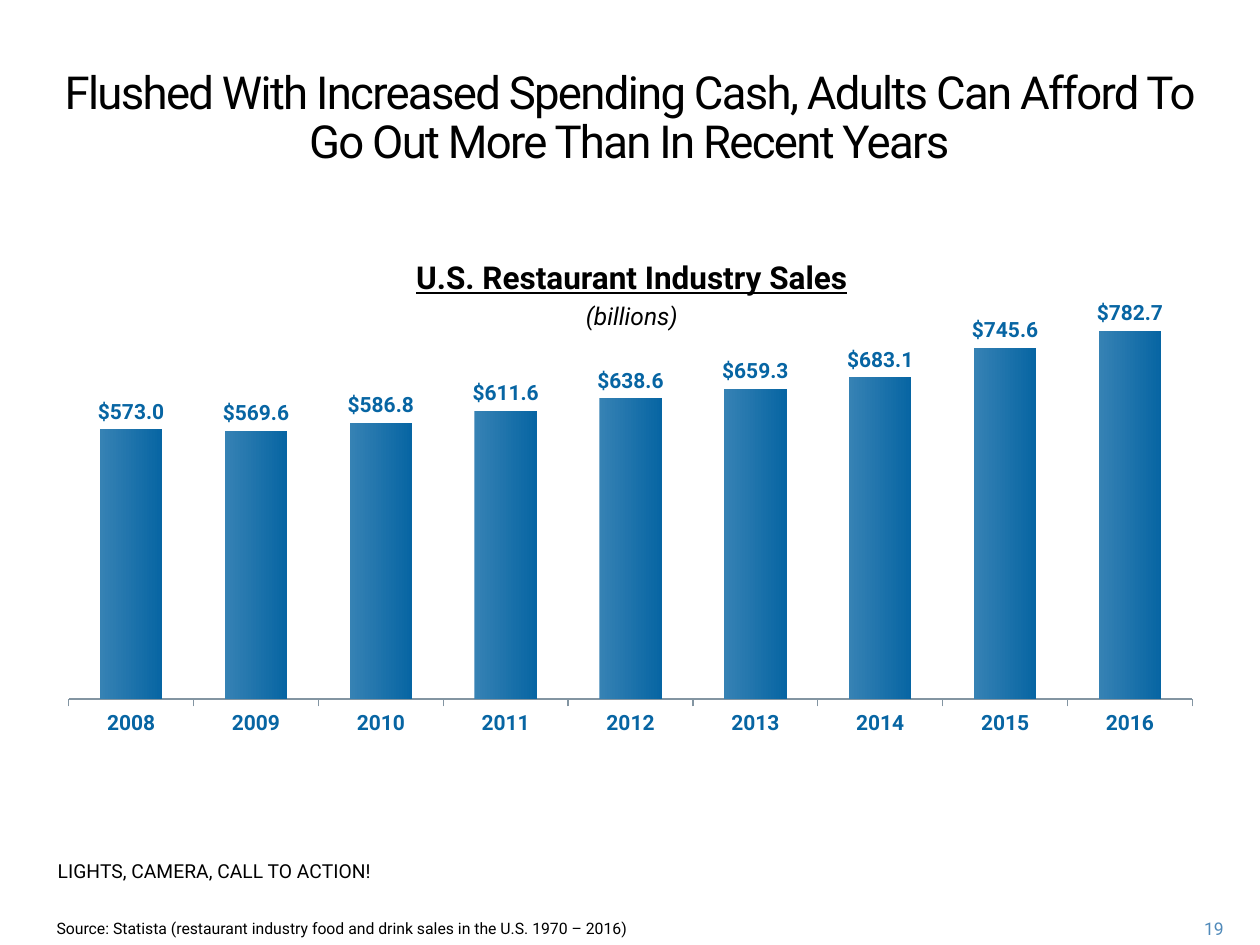
from lxml import etree
from pptx import Presentation
from pptx.chart.data import CategoryChartData
from pptx.dml.color import RGBColor
from pptx.enum.chart import XL_CHART_TYPE, XL_LABEL_POSITION, XL_TICK_MARK
from pptx.enum.text import MSO_ANCHOR, MSO_AUTO_SIZE, PP_ALIGN
from pptx.oxml import parse_xml
from pptx.oxml.ns import nsdecls
from pptx.util import Inches, Pt

FONT = "Roboto"
BLACK = RGBColor(0x00, 0x00, 0x00)
BLUE = RGBColor(0x07, 0x65, 0xA3)
LIGHT = RGBColor(0x36, 0x82, 0xB4)
PALE = RGBColor(0x50, 0x8A, 0xBA)
GREY = RGBColor(0x83, 0x95, 0xA2)


def style(font, size, color, bold=False):
    font.name = FONT
    font.size = Pt(size)
    font.color.rgb = color
    font.bold = bold


def add_text(box, text, size, color=BLACK, align=PP_ALIGN.LEFT):
    shape = slide.shapes.add_textbox(*map(Inches, box))
    shape.text_frame.word_wrap = True
    para = shape.text_frame.paragraphs[0]
    para.alignment = align
    run = para.add_run()
    run.text = text
    style(run.font, size, color)
    return shape.text_frame


prs = Presentation()
prs.slide_width = Inches(10)
prs.slide_height = Inches(7.5)
slide = prs.slides.add_slide(prs.slide_layouts[5])

# Title
title = slide.shapes.title
title.left, title.top = Inches(0.18), Inches(0.5)
title.width, title.height = Inches(9.63), Inches(1.4)
frame = title.text_frame
frame.word_wrap = True
frame.auto_size = MSO_AUTO_SIZE.NONE
frame.vertical_anchor = MSO_ANCHOR.TOP
para = frame.paragraphs[0]
para.alignment = PP_ALIGN.CENTER
para.line_spacing = Pt(28)
run = para.add_run()
run.text = ("Flushed With Increased Spending Cash, Adults Can Afford To "
            "Go Out More Than In Recent Years")
style(run.font, 26, BLACK)
run.font._element.set("spc", "-100")

# Sales chart
data = CategoryChartData(number_format='"$"#,##0.0')
data.categories = [str(year) for year in range(2008, 2017)]
data.add_series("Series 1", (573, 569.6, 586.8, 611.6, 638.6,
                             659.3, 683.1, 745.6, 782.7))
chart = slide.shapes.add_chart(
    XL_CHART_TYPE.COLUMN_CLUSTERED, Inches(0.36), Inches(2.11),
    Inches(9.29), Inches(3.82), data).chart
style(chart.font, 18, BLACK)
chart.has_legend = False
chart.has_title = False

# Axes
years = chart.category_axis
years.major_tick_mark = XL_TICK_MARK.OUTSIDE
years.format.line.color.rgb = GREY
years.format.line.width = Pt(0.75)
style(years.tick_labels.font, 12, BLUE, True)
sales = chart.value_axis
sales.visible = False
sales.has_major_gridlines = False
sales.minimum_scale, sales.maximum_scale = 0, 900

# Columns and labels
plot = chart.plots[0]
plot.gap_width = 100
plot.overlap = -20
plot.vary_by_categories = False
fill = plot.series[0].format.fill
fill.gradient()
fill.gradient_angle = 0
for stop, color, place in zip(fill.gradient_stops, (LIGHT, BLUE), (0, 1)):
    stop.color.rgb = color
    stop.position = place
plot.has_data_labels = True
labels = plot.data_labels
labels.show_value = True
labels.number_format = '"$"#,##0.0'
labels.number_format_is_linked = False
labels.position = XL_LABEL_POSITION.OUTSIDE_END
style(labels.font, 12, BLUE, True)

# Fixed plot area
area = chart._chartSpace.chart.plotArea
for old in area.findall("{*}layout"):
    area.remove(old)
layout = parse_xml(f"<c:layout {nsdecls('c')}><c:manualLayout/></c:layout>")
for tag, val in (("layoutTarget", "inner"), ("xMode", "edge"),
                 ("yMode", "edge"), ("x", "0.02"), ("y", "0.02"),
                 ("w", "0.96"), ("h", "0.88")):
    name = etree.QName(layout).namespace
    etree.SubElement(layout[0], f"{{{name}}}{tag}").set("val", val)
area.insert(0, layout)

# Chart heading
frame = add_text((0.2, 2, 9.63, 0.9), "U.S. Restaurant Industry Sales", 18,
                 align=PP_ALIGN.CENTER)
head = frame.paragraphs[0].runs[0].font
head.bold = head.underline = True
para = frame.add_paragraph()
para.alignment = PP_ALIGN.CENTER
para.space_before = Pt(3)
run = para.add_run()
run.text = "(billions)"
style(run.font, 14, BLACK)
run.font.italic = True

# Footer
add_text((0.36, 6.77, 3.08, 0.47), "LIGHTS, CAMERA, CALL TO ACTION!", 11)
add_text((0.35, 7.24, 6.08, 0.26), "Source: Statista (restaurant industry "
         "food and drink sales in the U.S. 1970 – 2016)", 9)
add_text((9.2, 7.24, 0.61, 0.25), "19", 10, PALE, PP_ALIGN.RIGHT)

prs.save("out.pptx")
